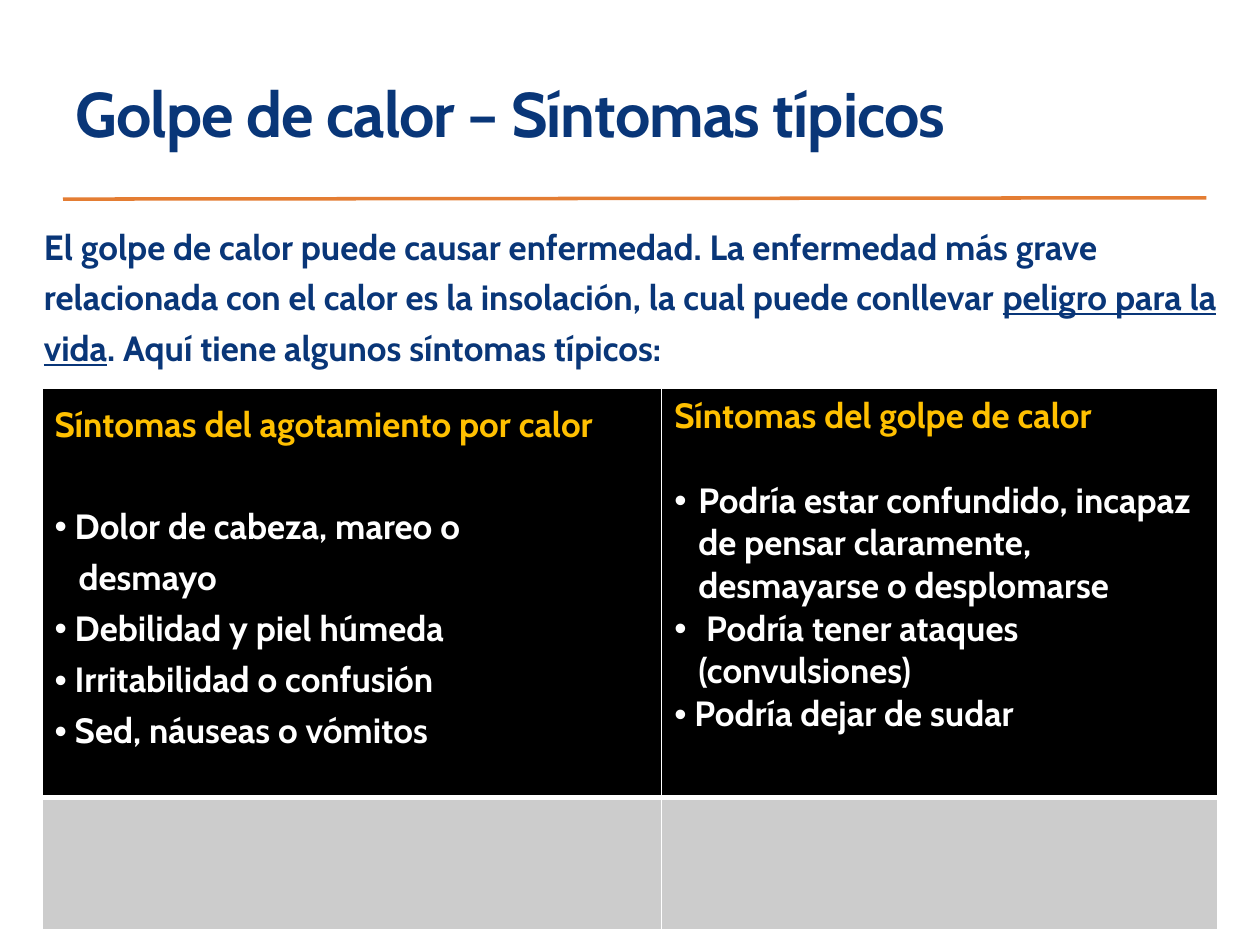
import pptx
import pptx.dml.color
import pptx.enum.shapes
import pptx.enum.text
import pptx.oxml
import pptx.oxml.ns
import pptx.util
from lxml import etree

RGBColor = pptx.dml.color.RGBColor
Inches, Pt = pptx.util.Inches, pptx.util.Pt
NAVY = RGBColor(0x09, 0x36, 0x78)
ORANGE = RGBColor(0xE4, 0x7D, 0x33)
GOLD = RGBColor(0xFF, 0xC0, 0x00)
WHITE = RGBColor(0xFF, 0xFF, 0xFF)
BLACK = RGBColor(0x00, 0x00, 0x00)
GRAY = RGBColor(0xCC, 0xCC, 0xCC)
FONT = "Cabin"
WIDTH, HEIGHT = Inches(10), Inches(7.5)
HANGING = Inches(0.19)

EXHAUSTION = [
    (" Dolor de cabeza, mareo o", True, 0, 0),
    ("desmayo", False, HANGING, 0),
    (" Debilidad y piel húmeda", True, 0, 0),
    (" Irritabilidad o confusión", True, 0, 0),
    (" Sed, náuseas o vómitos", True, 0, 0),
]
STROKE = [
    ("Podría estar confundido, incapaz de pensar claramente, desmayarse o desplomarse",
     True, HANGING, -HANGING),
    (" Podría tener ataques (convulsiones)", True, HANGING, -HANGING),
    (" Podría dejar de sudar", True, 0, 0),
]


def share(left, top, width, height):
    """Turn shares of the slide's size into a box of lengths."""
    return int(WIDTH * left), int(HEIGHT * top), int(WIDTH * width), int(HEIGHT * height)


def style(paragraph, size, color, spacing):
    """Set the font and line spacing of a paragraph."""
    paragraph.font.name = FONT
    paragraph.font.size = Pt(size)
    paragraph.font.bold = True
    paragraph.font.color.rgb = color
    paragraph.line_spacing = spacing


def set_bullet(paragraph, bulleted, margin, indent):
    """Give a paragraph its indents and, if wanted, a round bullet."""
    properties = paragraph._p.get_or_add_pPr()
    properties.set("marL", str(margin))
    properties.set("indent", str(indent))
    if bulleted:
        font = etree.SubElement(properties, pptx.oxml.ns.qn("a:buFont"))
        font.set("typeface", "Arial")
        etree.SubElement(properties, pptx.oxml.ns.qn("a:buChar")).set("char", "•")


def set_borders(cell, color, bottom_width):
    """Draw the four borders of a cell, with its own width at the bottom."""
    properties = cell._tc.get_or_add_tcPr()
    widths = {"lnL": 1, "lnR": 1, "lnT": 1, "lnB": bottom_width}
    for position, (tag, width) in enumerate(widths.items()):
        border = pptx.oxml.parse_xml(
            f'<a:{tag} {pptx.oxml.ns.nsdecls("a")} w="{Pt(width)}"><a:solidFill>'
            f'<a:srgbClr val="{color}"/></a:solidFill></a:{tag}>')
        properties.insert(position, border)


def add_heading(slide, box):
    """Place the title in the box, with the rule below it."""
    title = slide.shapes.title
    title.left, title.top, title.width, title.height = box
    frame = title.text_frame
    frame.auto_size = pptx.enum.text.MSO_AUTO_SIZE.NONE
    frame.vertical_anchor = pptx.enum.text.MSO_ANCHOR.BOTTOM
    frame.text = "Golpe de calor – Síntomas típicos"
    paragraph = frame.paragraphs[0]
    paragraph.alignment = pptx.enum.text.PP_ALIGN.LEFT
    style(paragraph, 36, NAVY, 0.9)
    paragraph.runs[0]._r.get_or_add_rPr().set("spc", "-50")

    left, top, width, height = box
    rule = slide.shapes.add_connector(
        pptx.enum.shapes.MSO_CONNECTOR.STRAIGHT,
        int(left + width * 1.1), int(top + height * 1.256), left, int(top + height * 1.264))
    rule.line.color.rgb = ORANGE
    rule.line.width = Pt(2)
    etree.SubElement(rule._element.spPr, pptx.oxml.ns.qn("a:effectLst"))


def add_introduction(slide, box):
    """Place the introductory paragraph in the box."""
    frame = slide.shapes.add_textbox(*box).text_frame
    frame.word_wrap = True
    paragraph = frame.paragraphs[0]
    style(paragraph, 20, NAVY, 1.2)
    paragraph.add_run().text = (
        "El golpe de calor puede causar enfermedad. La enfermedad más grave relacionada "
        "con el calor es la insolación, la cual puede conllevar ")
    danger = paragraph.add_run()
    danger.text = "peligro para la vida"
    danger.font.underline = True
    paragraph.add_run().text = ". Aquí tiene algunos síntomas típicos:"


def fill_symptoms(cell, heading, symptoms, spacing, gap):
    """Write a gold heading and its white list of symptoms in a cell."""
    frame = cell.text_frame
    paragraph = frame.paragraphs[0]
    paragraph.text = heading
    style(paragraph, 20, GOLD, spacing)
    paragraph.space_after = Pt(gap)
    for text, bulleted, margin, indent in symptoms:
        paragraph = frame.add_paragraph()
        paragraph.text = text
        set_bullet(paragraph, bulleted, margin, indent)
        style(paragraph, 20, WHITE, spacing)


def add_symptom_table(slide, box):
    """Place the two-column table of symptoms in the box."""
    width, height = box[2:]
    table = slide.shapes.add_table(2, 2, *box).table
    table.columns[0].width = int(width * 0.527)
    table.columns[1].width = width - table.columns[0].width
    table.rows[0].height = int(height * 0.755)
    table.rows[1].height = height - table.rows[0].height
    for row, color, bottom_width in zip(table.rows, (BLACK, GRAY), (3, 1)):
        for cell in row.cells:
            cell.fill.solid()
            cell.fill.fore_color.rgb = color
            set_borders(cell, WHITE, bottom_width)
    fill_symptoms(table.cell(0, 0), "Síntomas del agotamiento por calor", EXHAUSTION, 1.2, 29)
    fill_symptoms(table.cell(0, 1), "Síntomas del golpe de calor", STROKE, 1.0, 24)


def main():
    """Build the slide and save it."""
    presentation = pptx.Presentation()
    presentation.slide_width, presentation.slide_height = WIDTH, HEIGHT
    slide = presentation.slides.add_slide(presentation.slide_layouts[5])
    add_heading(slide, share(0.05, 0, 0.825, 1 / 6))
    add_introduction(slide, share(0.025, 0.223, 0.958, 0.123))
    add_symptom_table(slide, share(1 / 30, 0.411, 14 / 15, 0.573))
    presentation.save("out.pptx")


if __name__ == "__main__":
    main()
